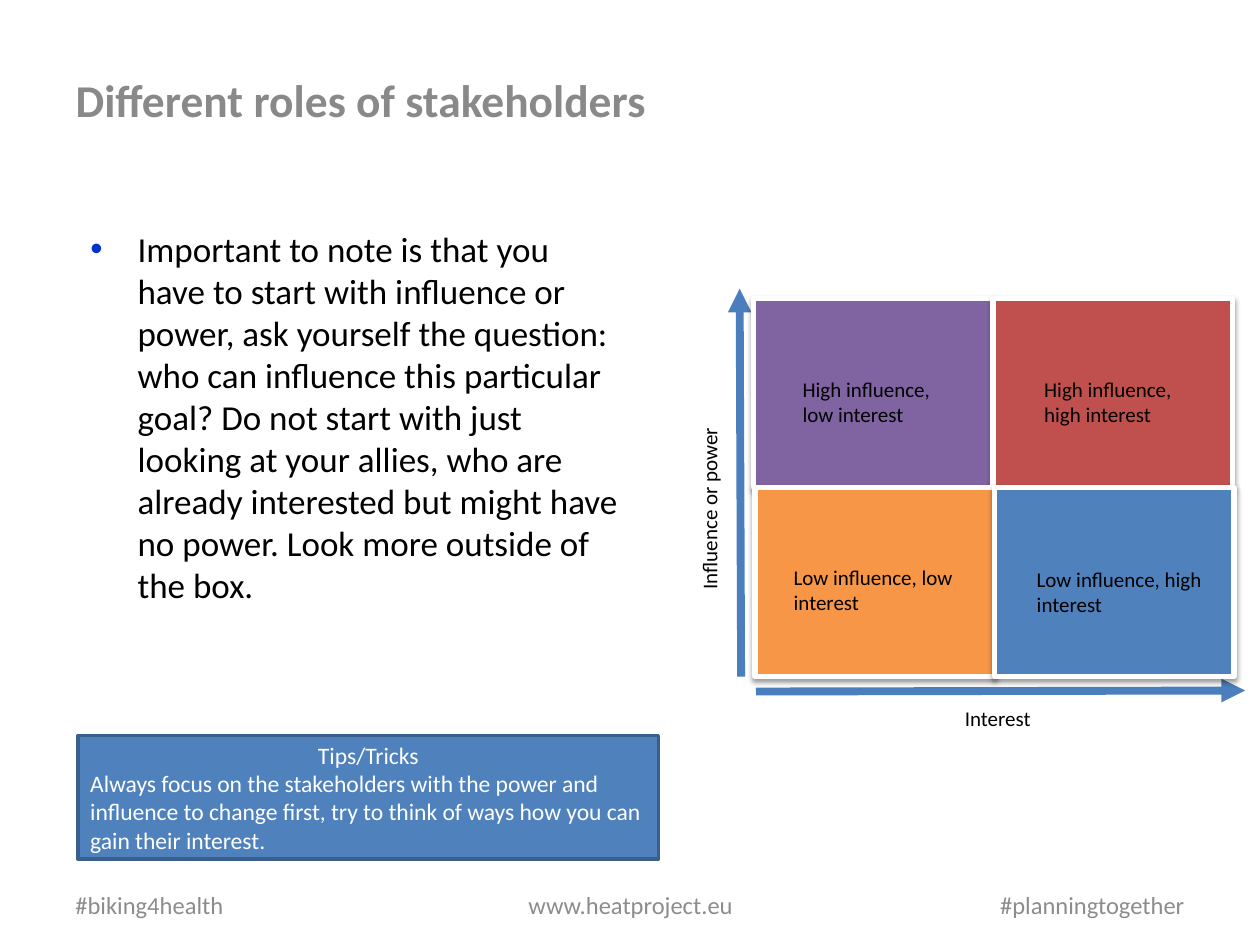
from lxml import etree
from pptx import Presentation
from pptx.dml.color import RGBColor
from pptx.enum import shapes, text
from pptx.oxml import parse_xml
from pptx.oxml.ns import nsdecls, qn
from pptx.util import Cm, Pt

LEFT, CENTER, RIGHT = text.PP_ALIGN.LEFT, text.PP_ALIGN.CENTER, text.PP_ALIGN.RIGHT
TOP, MIDDLE = text.MSO_ANCHOR.TOP, text.MSO_ANCHOR.MIDDLE


def color(hex_value):
    return RGBColor.from_string(hex_value)


def write(shape, wording, size, hex_value, align=LEFT, anchor=TOP, bold=False):
    """Fill a shape with text in one uniform style."""
    frame = shape.text_frame
    frame.text = wording
    frame.word_wrap = True
    frame.auto_size = text.MSO_AUTO_SIZE.NONE
    frame.vertical_anchor = anchor
    for paragraph in frame.paragraphs:
        paragraph.alignment = align
        for run in paragraph.runs:
            run.font.name = "Calibri"
            run.font.size = Pt(size)
            run.font.bold = bold
            run.font.color.rgb = color(hex_value)


prs = Presentation()
prs.slide_width, prs.slide_height = Cm(25.4), Cm(19.05)
slide = prs.slides.add_slide(prs.slide_layouts[1])

# Title and main point
title, point = slide.placeholders
title.left, title.top, title.width, title.height = Cm(1.27), Cm(1.32), Cm(13.03), Cm(2.49)
write(title, "Different roles of stakeholders", 26, "898989", bold=True)

point.left, point.top, point.width, point.height = Cm(1.57), Cm(4.45), Cm(11.23), Cm(12.57)
write(
    point,
    "Important to note is that you have to start with influence or power, ask yourself "
    "the question: who can influence this particular goal? Do not start with just looking "
    "at your allies, who are already interested but might have no power. Look more outside "
    "of the box.",
    20, "000000",
)
paragraph = point.text_frame.paragraphs[0]
paragraph.space_before = Pt(0)
properties = paragraph._p.get_or_add_pPr()
properties.set("marL", str(Cm(0.95)))
properties.set("indent", str(-Cm(0.95)))
bullet_color = etree.SubElement(properties, qn("a:buClr"))
etree.SubElement(bullet_color, qn("a:srgbClr"), val="0033CC")
etree.SubElement(properties, qn("a:buFont"), typeface="Arial")
etree.SubElement(properties, qn("a:buChar"), char="•")

# Footer
for wording, left, width, align in [
    ("#biking4health", 1.27, 5.92, LEFT),
    ("www.heatproject.eu", 8.69, 8.05, CENTER),
    ("#planningtogether", 18.21, 5.92, RIGHT),
]:
    footer = slide.shapes.add_textbox(Cm(left), Cm(17.73), Cm(width), Cm(1.02))
    write(footer, wording, 14, "8C8C8C", align, MIDDLE)

# Axes of the matrix
for ends in [(14.94, 13.64, 14.91, 5.82), (15.24, 13.94, 25.1, 13.92)]:
    axis = slide.shapes.add_connector(shapes.MSO_CONNECTOR.STRAIGHT, *map(Cm, ends))
    axis.line.color.rgb = color("4B7EBC")
    axis.line.width = Pt(4.5)
    etree.SubElement(axis.line._get_or_add_ln(), qn("a:tailEnd"), type="triangle")
    etree.SubElement(axis._element.spPr, qn("a:effectLst"))

# Quadrants, row by row
QUADRANT_W, QUADRANT_H = 4.83, 3.81
SHADOW = (
    f'<a:effectLst {nsdecls("a")}><a:outerShdw blurRad="{Pt(3.1)}" dist="{Pt(1.6)}" '
    'dir="5400000" rotWithShape="0"><a:srgbClr val="000000"><a:alpha val="38000"/>'
    '</a:srgbClr></a:outerShdw></a:effectLst>'
)
for index, fill in enumerate(["8064A2", "C0504D", "F79646", "4F81BD"]):
    row, column = divmod(index, 2)
    quadrant = slide.shapes.add_shape(
        shapes.MSO_SHAPE.RECTANGLE,
        Cm(15.19 + column * QUADRANT_W + row * 0.03), Cm(6.02 + row * QUADRANT_H),
        Cm(QUADRANT_W), Cm(QUADRANT_H),
    )
    quadrant.fill.solid()
    quadrant.fill.fore_color.rgb = color(fill)
    quadrant.line.color.rgb = color("FFFFFF")
    quadrant.line.width = Pt(3)
    quadrant._element.spPr.append(parse_xml(SHADOW))

# Quadrant and axis labels
for wording, left, top, width, height, rotation in [
    ("High influence, low interest", 15.93, 7.47, 3.58, 1.27, 0),
    ("High influence, high interest", 20.8, 7.47, 3.58, 1.27, 0),
    ("Low influence, low interest", 15.75, 11.25, 4.01, 1.27, 0),
    ("Low influence, high interest", 20.65, 11.3, 4.01, 1.27, 0),
    ("Influence or power", 12.29, 9.75, 4.01, 0.76, 270),
    ("Interest", 19.2, 14.1, 4.01, 0.76, 0),
]:
    label = slide.shapes.add_textbox(Cm(left), Cm(top), Cm(width), Cm(height))
    label.rotation = rotation
    write(label, wording, 12, "000000")

# Tips box
tips = slide.shapes.add_shape(
    shapes.MSO_SHAPE.RECTANGLE, Cm(1.57), Cm(14.83), Cm(11.71), Cm(2.49)
)
tips.shadow.inherit = False
tips.fill.solid()
tips.fill.fore_color.rgb = color("4F81BD")
tips.line.color.rgb = color("3A5F8C")
tips.line.width = Pt(2)
write(
    tips,
    "Tips/Tricks\nAlways focus on the stakeholders with the power and influence to change "
    "first, try to think of ways how you can gain their interest.",
    13.5, "FFFFFF", anchor=MIDDLE,
)
tips.text_frame.paragraphs[0].alignment = CENTER

prs.save("out.pptx")
